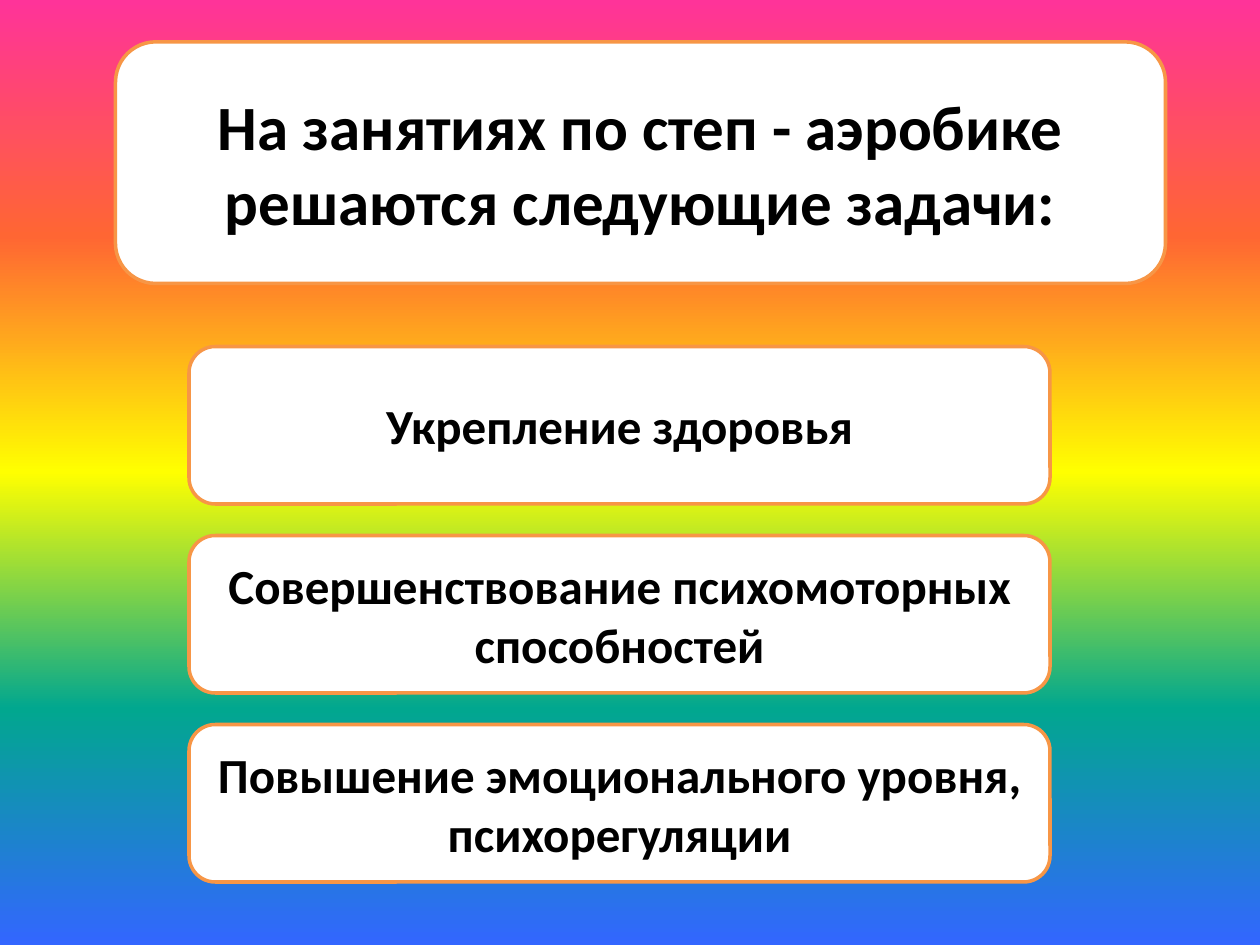
from lxml import etree
from pptx import Presentation
from pptx.dml.color import RGBColor
from pptx.enum.shapes import MSO_SHAPE
from pptx.enum.text import MSO_ANCHOR, PP_ALIGN
from pptx.oxml.ns import qn
from pptx.util import Inches, Pt

ROUNDED = MSO_SHAPE.ROUNDED_RECTANGLE
MIDDLE = MSO_ANCHOR.MIDDLE
CENTER = PP_ALIGN.CENTER

COLORS = {"card": "FFFFFF", "border": "F79646", "text": "000000"}
RAINBOW = ["FF3399", "FF6633", "FFFF00", "01A78F", "3366FF"]
FONT = "Calibri"

COLS, ROWS = 120, 30
SLIDE_W, SLIDE_H = Inches(10), Inches(7.5)
COL, ROW = SLIDE_W / COLS, SLIDE_H / ROWS

HEADING = "На занятиях по степ - аэробике решаются следующие задачи:"
TASKS = [
    "Укрепление здоровья",
    "Совершенствование психомоторных способностей",
    "Повышение эмоционального уровня, психорегуляции",
]


def paint_background(slide):
    """Fill the slide with an evenly spaced rainbow from top to bottom."""
    fill = slide.background.fill
    fill.gradient()
    fill.gradient_angle = 270
    stops = next(slide.element.iter(qn("a:gsLst")))
    stops.clear()
    for i, color in enumerate(RAINBOW):
        position = 100000 * i // (len(RAINBOW) - 1)
        stop = etree.SubElement(stops, qn("a:gs"), pos=str(position))
        etree.SubElement(stop, qn("a:srgbClr"), val=color)


def add_card(slide, box, text, size):
    """Add a rounded card with bold centred text; box is in columns and rows."""
    x, y, w, h = box
    sp = slide.shapes.add_shape(
        ROUNDED, round(x * COL), round(y * ROW), round(w * COL), round(h * ROW)
    )
    sp.shadow.inherit = False
    sp.fill.solid()
    sp.fill.fore_color.rgb = RGBColor.from_string(COLORS["card"])
    sp.line.color.rgb = RGBColor.from_string(COLORS["border"])
    sp.line.width = Pt(2)
    tf = sp.text_frame
    tf.word_wrap = True
    tf.vertical_anchor = MIDDLE
    p = tf.paragraphs[0]
    p.text = text
    p.alignment = CENTER
    p.font.name = FONT
    p.font.size = Pt(size)
    p.font.bold = True
    p.font.color.rgb = RGBColor.from_string(COLORS["text"])


def add_task_list(slide, box, tasks, gap=1):
    """Stack equal task cards in the box with a gap of rows between them."""
    x, y, w, h = box
    card_h = (h - gap * (len(tasks) - 1)) / len(tasks)
    for i, task in enumerate(tasks):
        add_card(slide, (x, y + i * (card_h + gap), w, card_h), task, 28)


def main():
    """Build the slide and save it."""
    prs = Presentation()
    prs.slide_width, prs.slide_height = SLIDE_W, SLIDE_H
    slide = prs.slides.add_slide(prs.slide_layouts.get_by_name("Blank"))
    paint_background(slide)
    add_card(slide, (11, 1.33, 100, 7.67), HEADING, 36)
    add_task_list(slide, (18, 11, 82, 17), TASKS)
    prs.save("out.pptx")


if __name__ == "__main__":
    main()
